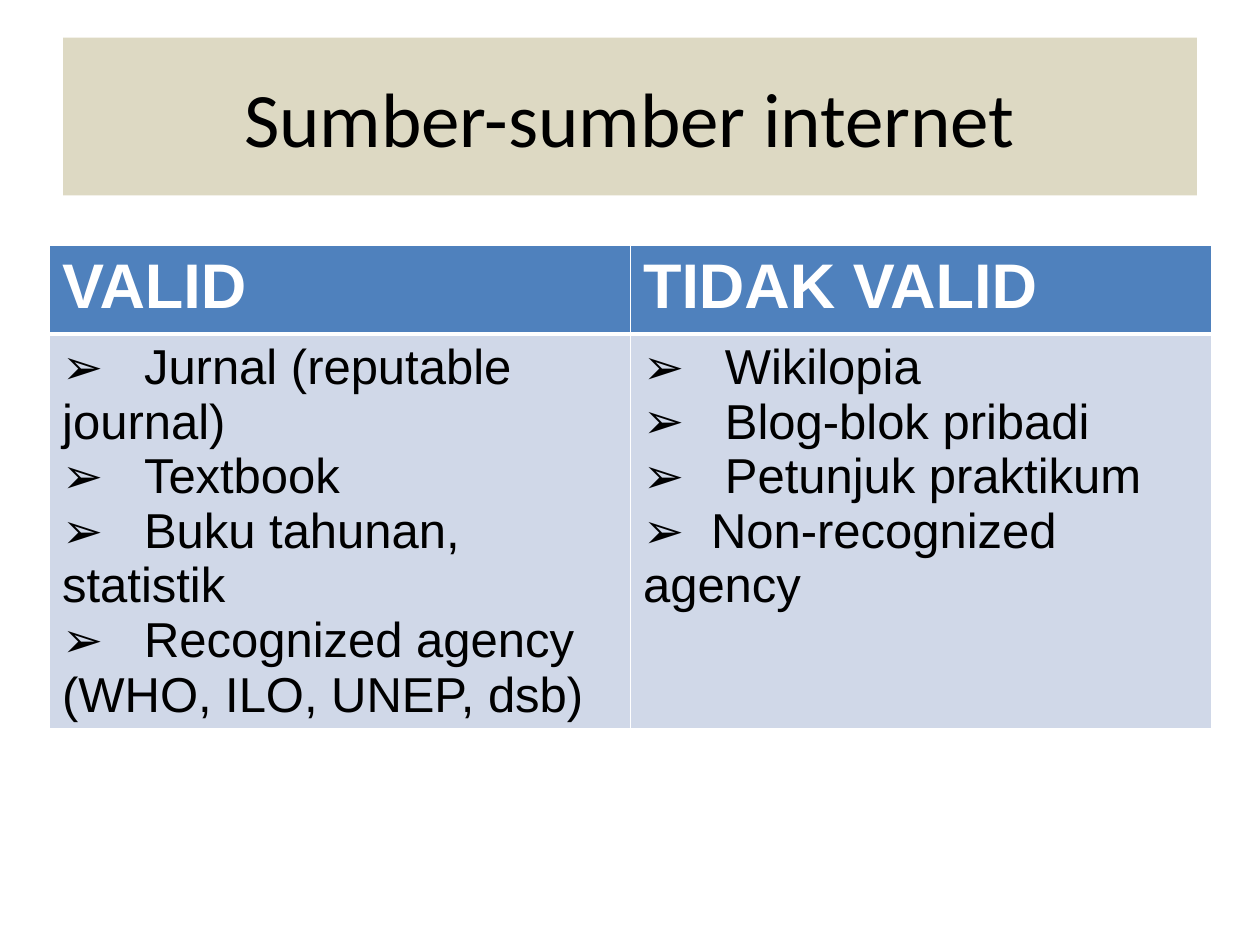
from typing import NamedTuple

from lxml import etree
from pptx import Presentation
from pptx.dml.color import RGBColor
from pptx.enum.text import MSO_ANCHOR, PP_ALIGN
from pptx.oxml.ns import qn
from pptx.util import Cm, Pt

CENTER = PP_ALIGN.CENTER
MIDDLE = MSO_ANCHOR.MIDDLE

BLACK, WHITE = "000000", "FFFFFF"
SAND, BLUE, PALE_BLUE = "DDD9C3", "4F81BD", "D0D8E8"
TITLE_ONLY = 5
THIN, THICK = 1, 3


class Item(NamedTuple):
    text: str
    tab: float = 1.65


class Column(NamedTuple):
    heading: str
    items: list[Item]


COLUMNS = [
    Column("VALID", [
        Item("Jurnal (reputable journal)"),
        Item("Textbook"),
        Item("Buku tahunan, statistik"),
        Item("Recognized agency (WHO, ILO, UNEP, dsb)"),
    ]),
    Column("TIDAK VALID", [
        Item("Wikilopia"),
        Item("Blog-blok pribadi"),
        Item("Petunjuk praktikum"),
        Item("Non-recognized agency", tab=1.37),
    ]),
]


def color(code: str) -> RGBColor:
    return RGBColor.from_string(code)


def paint(shape, code: str) -> None:
    shape.fill.solid()
    shape.fill.fore_color.rgb = color(code)


def format_text(para, font: str, size: int, code: str, bold: bool = False) -> None:
    for span in para.runs:
        span.font.name = font
        span.font.size = Pt(size)
        span.font.bold = bold
        span.font.color.rgb = color(code)


def add_bullet(para, tab: float) -> None:
    """Put an arrow bullet at the margin, with the first line's text at the tab."""
    properties = para._p.get_or_add_pPr()
    properties.set("marL", "0")
    properties.set("indent", "0")
    etree.SubElement(properties, qn("a:buFont"), typeface="Arial")
    etree.SubElement(properties, qn("a:buChar"), char="➢")
    stops = etree.SubElement(properties, qn("a:tabLst"))
    etree.SubElement(stops, qn("a:tab"), pos=str(Cm(tab)), algn="l")


def add_borders(cell, top: int, bottom: int) -> None:
    properties = cell._tc.get_or_add_tcPr()
    widths = {"a:lnL": THIN, "a:lnR": THIN, "a:lnT": top, "a:lnB": bottom}
    for side, width in widths.items():
        line = etree.SubElement(properties, qn(side), w=str(Pt(width)))
        fill = etree.SubElement(line, qn("a:solidFill"))
        etree.SubElement(fill, qn("a:srgbClr"), val=WHITE)


def fill_heading(cell, text: str) -> None:
    add_borders(cell, THIN, THICK)
    paint(cell, BLUE)
    cell.text_frame.text = text
    format_text(cell.text_frame.paragraphs[0], "Arial", 36, WHITE, bold=True)


def fill_items(cell, items: list[Item]) -> None:
    add_borders(cell, THICK, THIN)
    paint(cell, PALE_BLUE)
    frame = cell.text_frame
    frame.text = "\n".join("\t" + item.text for item in items)
    for para, item in zip(frame.paragraphs, items):
        add_bullet(para, item.tab)
        format_text(para, "Arial", 28, BLACK)


def add_title(page, text: str) -> None:
    title = page.shapes.title
    title.left, title.top = Cm(1.27), Cm(0.76)
    title.width, title.height = Cm(22.86), Cm(3.18)
    paint(title, SAND)
    frame = title.text_frame
    frame.text = text
    frame.vertical_anchor = MIDDLE
    para = frame.paragraphs[0]
    para.alignment = CENTER
    format_text(para, "Calibri", 44, BLACK)


def add_source_table(page, columns: list[Column]) -> None:
    table = page.shapes.add_table(
        2, len(columns), Cm(1), Cm(4.95), Cm(23.42), Cm(9.15)).table
    table.rows[0].height = Cm(1.78)
    table.rows[1].height = Cm(7.37)
    for index, column in enumerate(columns):
        fill_heading(table.cell(0, index), column.heading)
        fill_items(table.cell(1, index), column.items)


def main() -> None:
    deck = Presentation()
    deck.slide_width, deck.slide_height = Cm(25.4), Cm(19.05)
    page = deck.slides.add_slide(deck.slide_layouts[TITLE_ONLY])
    add_title(page, "Sumber-sumber internet")
    add_source_table(page, COLUMNS)
    deck.save("out.pptx")


if __name__ == "__main__":
    main()
